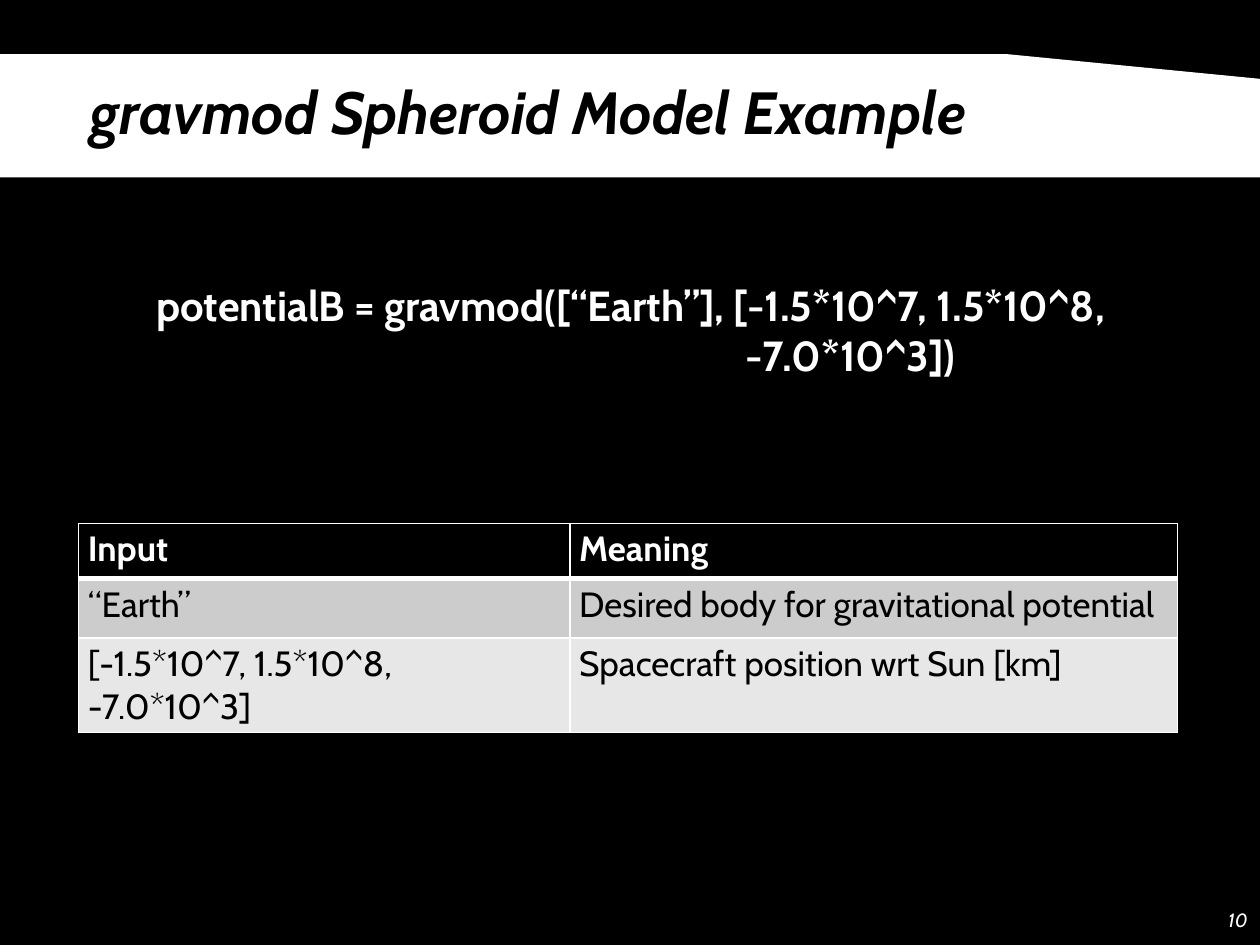
from dataclasses import dataclass

from lxml.etree import SubElement as Sub
from pptx import Presentation
from pptx.dml.color import RGBColor as Rgb
from pptx.enum.shapes import MSO_SHAPE as Shape
from pptx.enum.text import MSO_ANCHOR as Anchor, MSO_AUTO_SIZE as Fit, PP_ALIGN as Align
from pptx.oxml.ns import qn
from pptx.util import Pt

FONT = "Cabin"
HUES = {"black": "000000", "white": "FFFFFF", "dark": "CCCCCC", "light": "E7E7E7"}


@dataclass
class Style:
    size: float
    hue: str
    bold: bool = False
    ital: bool = False


@dataclass
class Row:
    high: float
    fill: str
    style: Style
    top: float
    base: float
    cells: tuple[str, str]


def tint(name: str) -> Rgb:
    return Rgb.from_string(HUES[name])


def put(para, text: str, style: Style, align=Align.LEFT):
    """Add one styled run to a paragraph."""
    para.alignment = align
    run = para.add_run()
    run.text = text
    font = run.font
    font.name, font.size = FONT, Pt(style.size)
    font.bold, font.italic = style.bold, style.ital
    font.color.rgb = tint(style.hue)
    return run


def stroke(owner, tag: str, width: float, hue: str):
    """Add a solid line element to a cell or run."""
    line = Sub(owner, qn(tag), w=str(Pt(width)))
    Sub(Sub(line, qn("a:solidFill")), qn("a:srgbClr"), val=HUES[hue])
    return line


def fill_row(table, num: int, row: Row) -> None:
    table.rows[num].height = Pt(row.high)
    for cell, text in zip(table.rows[num].cells, row.cells):
        for side, width in zip("LRTB", (1, 1, row.top, row.base)):
            stroke(cell._tc.get_or_add_tcPr(), f"a:ln{side}", width, "white")
        cell.fill.solid()
        cell.fill.fore_color.rgb = tint(row.fill)
        cell.margin_left = cell.margin_right = Pt(5.3)
        cell.margin_top = cell.margin_bottom = Pt(2.65)
        put(cell.text_frame.paragraphs[0], text, row.style)


HEAD = Style(20, "white", bold=True)
BODY = Style(20, "black")
CODE = Style(24, "white", bold=True)
ROWS = (
    Row(31.7, "black", HEAD, 1, 3, ("Input", "Meaning")),
    Row(34, "dark", BODY, 3, 1, ("“Earth”", "Desired body for gravitational potential")),
    Row(54, "light", BODY, 1, 1,
        ("[-1.5*10^7, 1.5*10^8, -7.0*10^3]", "Spacecraft position wrt Sun [km]")),
)


def main() -> None:
    deck = Presentation()
    deck.slide_width, deck.slide_height = Pt(720), Pt(540)
    slide = deck.slides.add_slide(deck.slide_layouts[5])
    slide.background.fill.solid()
    slide.background.fill.fore_color.rgb = tint("black")
    shapes = slide.shapes

    # Title
    title = shapes.title
    title.left, title.top, title.width, title.height = Pt(44.6), Pt(44), Pt(643), Pt(70.6)
    frame = title.text_frame
    frame.auto_size, frame.vertical_anchor = Fit.NONE, Anchor.TOP
    para = frame.paragraphs[0]
    para.line_spacing = 0.9
    run = put(para, "gravmod Spheroid Model Example", Style(34, "black", True, True))
    props = run._r.get_or_add_rPr()
    props.insert(0, stroke(props, "a:ln", 0.75, "black"))

    # White band behind the title, cut at the top right
    band = shapes.add_shape(Shape.FLOWCHART_CARD, Pt(0), Pt(31), Pt(720), Pt(70.4))
    band.shadow.inherit = False
    band.fill.solid()
    band.fill.fore_color.rgb = tint("white")
    band.line.fill.background()
    band.element.spPr.xfrm.set("flipH", "1")
    title.element.addprevious(band.element)

    # Page number
    page = shapes.add_textbox(Pt(687.6), Pt(511), Pt(32.4), Pt(29)).text_frame
    page.word_wrap, page.vertical_anchor = True, Anchor.MIDDLE
    put(page.paragraphs[0], "10", Style(11, "white", ital=True), Align.RIGHT)

    # Input table
    table = shapes.add_table(len(ROWS), 2, Pt(44.9), Pt(299), Pt(628), Pt(120)).table
    for col, width in zip(table.columns, (280.8, 347.2)):
        col.width = Pt(width)
    for num, row in enumerate(ROWS):
        fill_row(table, num, row)

    # Function call, its second line indented under the position
    call = shapes.add_textbox(Pt(38.2), Pt(156.2), Pt(644.4), Pt(65.5)).text_frame
    call.word_wrap = True
    put(call.paragraphs[0], "potentialB = gravmod([“Earth”], [-1.5*10^7, 1.5*10^8,",
        CODE, Align.CENTER)
    rest = call.add_paragraph()
    put(rest, "-7.0*10^3])", CODE, Align.CENTER)
    rest._p.get_or_add_pPr().set("marL", str(Pt(251)))

    deck.save("out.pptx")


if __name__ == "__main__":
    main()
